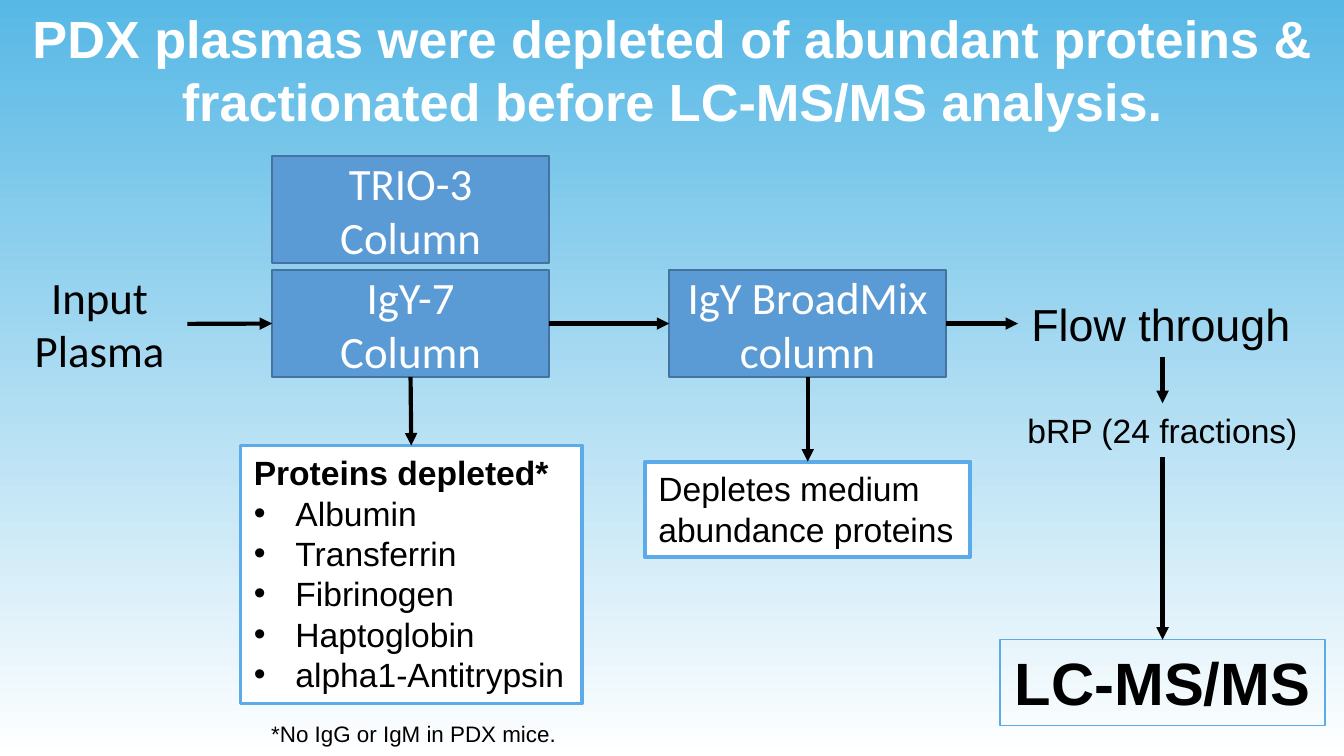
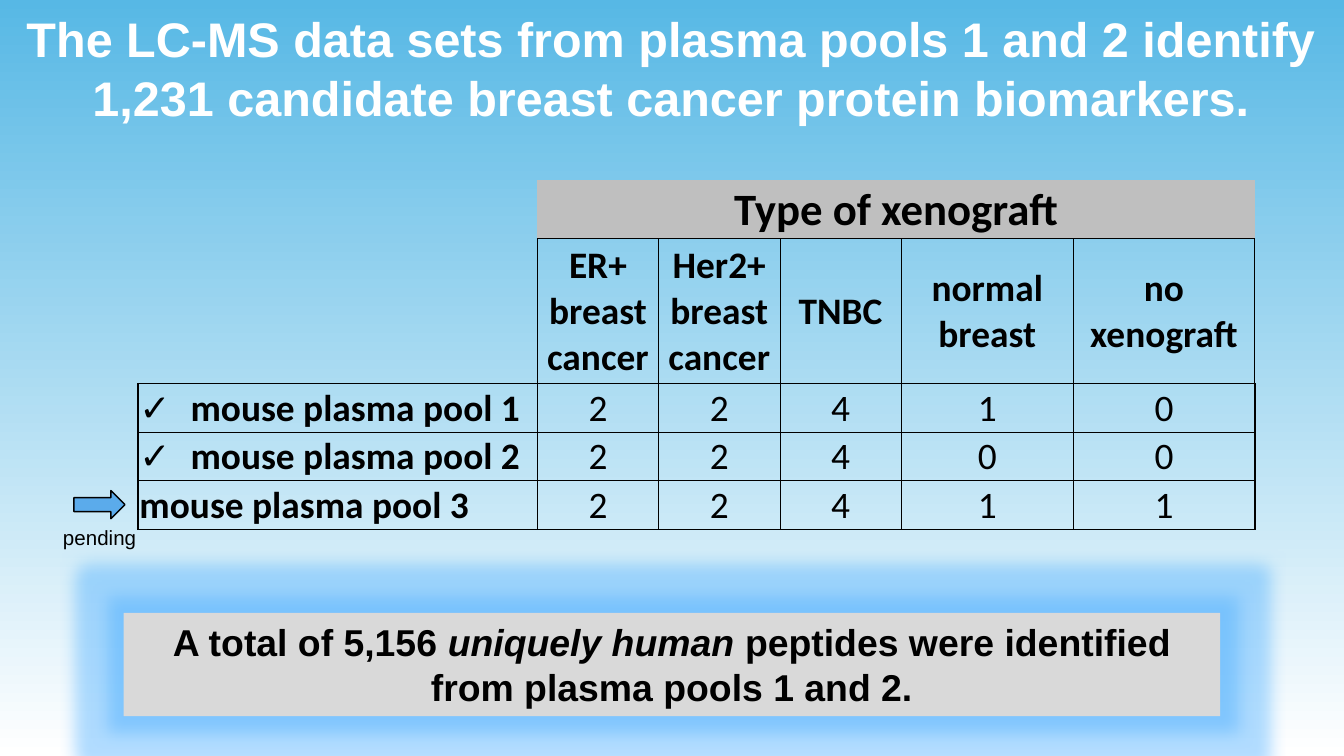
"""Build two slides on plasma depletion and the resulting biomarker pools."""
from dataclasses import dataclass
from typing import Any, NamedTuple, Optional

from lxml import etree
from pptx import Presentation
from pptx import util as u
from pptx.dml.color import RGBColor
from pptx.enum import shapes, text
from pptx.oxml.ns import qn

COLORS = {
    "sky": "57B8E5", "white": "FFFFFF", "black": "000000", "column": "5B9BD5",
    "column_edge": "43739E", "accent": "5BABEB", "band": "BFBFBF",
    "panel": "D9D9D9", "glow": "3FA9FF",
}
COLUMNS, ROWS = 100, 56.25
CELL = u.Inches(0.1)
CENTER, LEFT = text.PP_ALIGN.CENTER, text.PP_ALIGN.LEFT
TOP, MIDDLE = text.MSO_ANCHOR.TOP, text.MSO_ANCHOR.MIDDLE
RECTANGLE = shapes.MSO_SHAPE.RECTANGLE
FORMATS: dict[str, dict[str, Any]] = {
    "title": {"name": "Arial", "size": u.Pt(28), "bold": True},
    "long_title": {"name": "Arial", "size": u.Pt(26), "bold": True},
    "step": {"name": "Calibri", "size": u.Pt(24)},
    "result": {"name": "Arial", "size": u.Pt(24)},
    "detail": {"name": "Arial", "size": u.Pt(18)},
    "heading": {"name": "Arial", "size": u.Pt(18), "bold": True},
    "method": {"name": "Arial", "size": u.Pt(32), "bold": True},
    "note": {"name": "Arial", "size": u.Pt(12)},
    "label": {"name": "Arial", "size": u.Pt(11)},
    "summary": {"name": "Arial", "size": u.Pt(20), "bold": True},
    "emphasis": {"name": "Arial", "size": u.Pt(20), "bold": True, "italic": True},
    "group": {"name": "Calibri", "size": u.Pt(24), "bold": True},
    "header": {"name": "Calibri", "size": u.Pt(20), "bold": True},
    "count": {"name": "Calibri", "size": u.Pt(20)},
}


class Span(NamedTuple):
    """A stretch of text in one format."""

    words: str
    style: str


class Para(NamedTuple):
    """A paragraph with an optional bullet and its indent in inches."""

    spans: list[Span]
    bullet: str = ""
    indent: float = 0


class Area(NamedTuple):
    """A place on the grid, in columns and rows."""

    left: float
    top: float
    width: float
    height: float


@dataclass
class Box:
    """A text box, or a preset shape, with its look."""

    area: Area
    paras: list[Para]
    preset: Optional[shapes.MSO_SHAPE] = None
    align: text.PP_ALIGN = LEFT
    anchor: text.MSO_ANCHOR = TOP
    color: str = "black"
    fill: str = ""
    line: str = ""
    weight: float = 1
    wrap: bool = True
    grow: bool = True
    glow: float = 0


class Arrow(NamedTuple):
    """An arrow between the sides of two named boxes."""

    start: str
    start_side: int
    end: str
    end_side: int


def lines(words: str, style: str) -> list[Para]:
    """Make one paragraph of each line of the words."""
    return [Para([Span(line, style)]) for line in words.split("\n")]


def grid(amount: float) -> int:
    """Turn columns or rows into a length."""
    return round(amount * CELL)


def rgb(color: str) -> RGBColor:
    """Look up a named colour."""
    return RGBColor.from_string(COLORS[color])


def add_node(parent: Any, tag: str, **values: Any) -> Any:
    """Append a drawing element with its attributes."""
    return etree.SubElement(parent, qn(tag), {key: str(value) for key, value in values.items()})


def paint(fill: Any, color: str) -> None:
    """Fill with a named colour, or with nothing."""
    if color:
        fill.solid()
        fill.fore_color.rgb = rgb(color)
    else:
        fill.background()


def write(frame: Any, paras: list[Para], align: text.PP_ALIGN, color: str) -> None:
    """Write the paragraphs into a text frame."""
    for index, para in enumerate(paras):
        target = frame.add_paragraph() if index else frame.paragraphs[0]
        target.alignment = align
        if para.bullet:
            props = target._p.get_or_add_pPr()
            props.set("marL", str(u.Inches(para.indent)))
            props.set("indent", str(-u.Inches(para.indent)))
            add_node(props, "a:buFont", typeface="Arial")
            add_node(props, "a:buChar", char=para.bullet)
        for span in para.spans:
            run = target.add_run()
            run.text = span.words
            run.font.color.rgb = rgb(color)
            for key, value in FORMATS[span.style].items():
                setattr(run.font, key, value)


def draw_box(page: Any, box: Box) -> Any:
    """Draw a box and its text."""
    place = [grid(amount) for amount in box.area]
    if box.preset is None:
        shape = page.shapes.add_textbox(*place)
    else:
        shape = page.shapes.add_shape(box.preset, *place)
        shape.shadow.inherit = False
        paint(shape.fill, box.fill)
        paint(shape.line.fill, box.line)
        if box.line:
            shape.line.width = u.Pt(box.weight)
    if box.glow:
        glow = add_node(shape._element.spPr.find(qn("a:effectLst")), "a:glow", rad=grid(box.glow))
        tint = add_node(glow, "a:srgbClr", val=COLORS["glow"])
        add_node(tint, "a:alpha", val=40000)
    sizing = text.MSO_AUTO_SIZE
    settings = {
        "word_wrap": box.wrap, "vertical_anchor": box.anchor,
        "auto_size": sizing.SHAPE_TO_FIT_TEXT if box.grow else sizing.NONE,
    }
    for key, value in settings.items():
        setattr(shape.text_frame, key, value)
    write(shape.text_frame, box.paras, box.align, box.color)
    return shape


def draw_arrow(page: Any, arrow: Arrow, drawn: dict[str, Any]) -> None:
    """Join two drawn boxes with an arrow."""
    joint = page.shapes.add_connector(shapes.MSO_CONNECTOR.STRAIGHT, 0, 0, 0, 0)
    joint.begin_connect(drawn[arrow.start], arrow.start_side)
    joint.end_connect(drawn[arrow.end], arrow.end_side)
    joint.line.color.rgb = rgb("black")
    joint.line.width = u.Pt(2.25)
    add_node(joint.line._get_or_add_ln(), "a:tailEnd", type="triangle")
    add_node(joint._element.spPr, "a:effectLst")


def add_page(deck: Any) -> Any:
    """Add a blank page with the sky gradient."""
    page = deck.slides.add_slide(deck.slide_layouts[6])
    fill = page.background.fill
    fill.gradient()
    fill.gradient_angle = 270
    for stop, color in zip(fill.gradient_stops, ("sky", "white")):
        stop.color.rgb = rgb(color)
    return page


def title(words: str, style: str, top: float, height: float, grow: bool) -> Box:
    """Describe a title across the whole page."""
    return Box(Area(0, top, COLUMNS, height), lines(words, style), align=CENTER,
               color="white", grow=grow)


def column_box(left: float, top: float, words: str) -> Box:
    """Describe a blue separation column."""
    return Box(Area(left, top, 20.6, 7.95), lines(words, "step"), RECTANGLE, CENTER, MIDDLE,
               "white", "column", "column_edge", grow=False)


def framed(area: Area, paras: list[Para]) -> Box:
    """Describe a white box with an accent frame."""
    return Box(area, paras, RECTANGLE, fill="white", line="accent", weight=2, wrap=False)


def build_workflow(deck: Any) -> None:
    """Build the depletion workflow."""
    page = add_page(deck)
    proteins = ["Albumin", "Transferrin", "Fibrinogen", "Haptoglobin", "alpha1-Antitrypsin"]
    depleted = lines("Proteins depleted*", "heading")
    depleted += [Para([Span(name, "detail")], "•", 0.31) for name in proteins]
    boxes = {
        "first": column_box(20.25, 20.1, "IgY-7\nColumn"),
        "input": Box(Area(0.85, 19.55, 13.1, 9.1), lines("Input\nPlasma", "step"), align=CENTER),
        "second": column_box(49.8, 20.1, "IgY BroadMix column"),
        "flow": Box(Area(75.75, 21.55, 21.5, 5.05), lines("Flow through", "result"), wrap=False),
        "proteins": framed(Area(17.9, 33.15, 25.4, 19.2), depleted),
        "medium": framed(Area(48, 34.35, 24.2, 7.1),
                         lines("Depletes medium\nabundance proteins", "detail")),
        "note": Box(Area(19.2, 53.1, 25, 3), lines("*No IgG or IgM in PDX mice.", "note")),
        "alternative": column_box(20.25, 11.6, "TRIO-3\nColumn"),
        "fractions": Box(Area(75.35, 30, 22.3, 4), lines("bRP (24 fractions)", "detail"),
                         align=CENTER, wrap=False),
        "method": Box(Area(74.4, 47.6, 24.2, 6.4), lines("LC-MS/MS", "method"), RECTANGLE,
                      CENTER, line="accent", weight=0.75, wrap=False),
        "title": title("PDX plasmas were depleted of abundant proteins & "
                       "fractionated before LC-MS/MS analysis.", "title", 0, 10.5, False),
    }
    drawn = {name: draw_box(page, box) for name, box in boxes.items()}
    across = [("input", "first"), ("first", "second"), ("second", "flow")]
    down = [("first", "proteins"), ("second", "medium"), ("flow", "fractions"),
            ("fractions", "method")]
    arrows = [Arrow(start, 3, end, 1) for start, end in across]
    arrows += [Arrow(start, 2, end, 0) for start, end in down]
    for arrow in arrows:
        draw_arrow(page, arrow, drawn)


def border_widths(row: int, column: int) -> dict[str, float]:
    """Give the border widths of a table cell in points."""
    if row == 0:
        return {"B": 0.5} if column else {}
    if row == 1:
        return {"L": 0.5, "R": 0.5, "T": 0.5, "B": 1} if column else {"R": 0.5, "B": 1}
    outer = {"L": column == 0, "R": column == 5, "T": row == 2, "B": row == 4}
    return {side: 1 if edge else 0.5 for side, edge in outer.items()}


def draw_borders(cell: Any, widths: dict[str, float]) -> None:
    """Set the four borders of a cell."""
    props = cell._tc.get_or_add_tcPr()
    for index, side in enumerate("LRTB"):
        border = add_node(props, f"a:ln{side}", w=u.Pt(widths.get(side, 0)))
        if side in widths:
            add_node(add_node(border, "a:solidFill"), "a:srgbClr", val=COLORS["black"])
        else:
            add_node(border, "a:noFill")
        props.insert(index, border)


def draw_pools(page: Any) -> None:
    """Draw the table of mouse plasma pools."""
    widths, heights = [29.7, 9.03, 9.03, 9.03, 12.8, 13.5], [4.35, 10.8, 3.6, 3.6, 3.65]
    rows = [
        ["", "Type of xenograft", "", "", "", ""],
        ["", "ER+ breast cancer", "Her2+ breast cancer", "TNBC", "normal breast", "no xenograft"],
        ["mouse plasma pool 1", "2", "2", "4", "1", "0"],
        ["mouse plasma pool 2", "2", "2", "4", "0", "0"],
        ["mouse plasma pool 3", "2", "2", "4", "1", "1"],
    ]
    place = [grid(amount) for amount in (10.28, 13.4, sum(widths), sum(heights))]
    table = page.shapes.add_table(len(rows), len(widths), *place).table
    table.first_row = table.horz_banding = False
    for column, width in zip(table.columns, widths):
        column.width = grid(width)
    for line, height in zip(table.rows, heights):
        line.height = grid(height)
    table.cell(0, 1).merge(table.cell(0, 5))
    margins = {"margin_left": 0.01, "margin_right": 0.01, "margin_top": 0.01, "margin_bottom": 0}
    for row, values in enumerate(rows):
        for column, words in enumerate(values):
            cell = table.cell(row, column)
            cell.vertical_anchor = MIDDLE
            for key, value in margins.items():
                setattr(cell, key, u.Inches(value))
            paint(cell.fill, "band" if row == 0 and column else "")
            draw_borders(cell, border_widths(row, column))
            style = "group" if row == 0 else "count" if row > 1 and column else "header"
            done = row in (2, 3) and column == 0
            para = Para([Span(words, style)] if words else [], "✓" if done else "", 0.38)
            write(cell.text_frame, [para], CENTER if column else LEFT, "black")


def build_results(deck: Any) -> None:
    """Build the page of identified biomarkers."""
    page = add_page(deck)
    draw_pools(page)
    summary = Para([Span("A total of 5,156 ", "summary"), Span("uniquely human ", "emphasis"),
                    Span("peptides were identified from plasma pools 1 and 2.", "summary")])
    boxes = [
        title("The LC-MS data sets from plasma pools 1 and 2 identify 1,231 candidate "
              "breast cancer protein biomarkers.", "long_title", 0.2, 9.8, True),
        Box(Area(9.2, 45.6, 81.6, 7.7), [summary], RECTANGLE, CENTER, fill="panel", glow=2.5),
        Box(Area(5.5, 36.5, 3.8, 2.1), [], shapes.MSO_SHAPE.RIGHT_ARROW, fill="accent",
            line="black", weight=0.75, grow=False),
        Box(Area(3.7, 38.6, 7.5, 2.9), lines("pending", "label"), wrap=False),
    ]
    for box in boxes:
        draw_box(page, box)


def main() -> None:
    """Build and save the deck."""
    deck = Presentation()
    deck.slide_width, deck.slide_height = grid(COLUMNS), grid(ROWS)
    build_workflow(deck)
    build_results(deck)
    deck.save("out.pptx")


if __name__ == "__main__":
    main()
